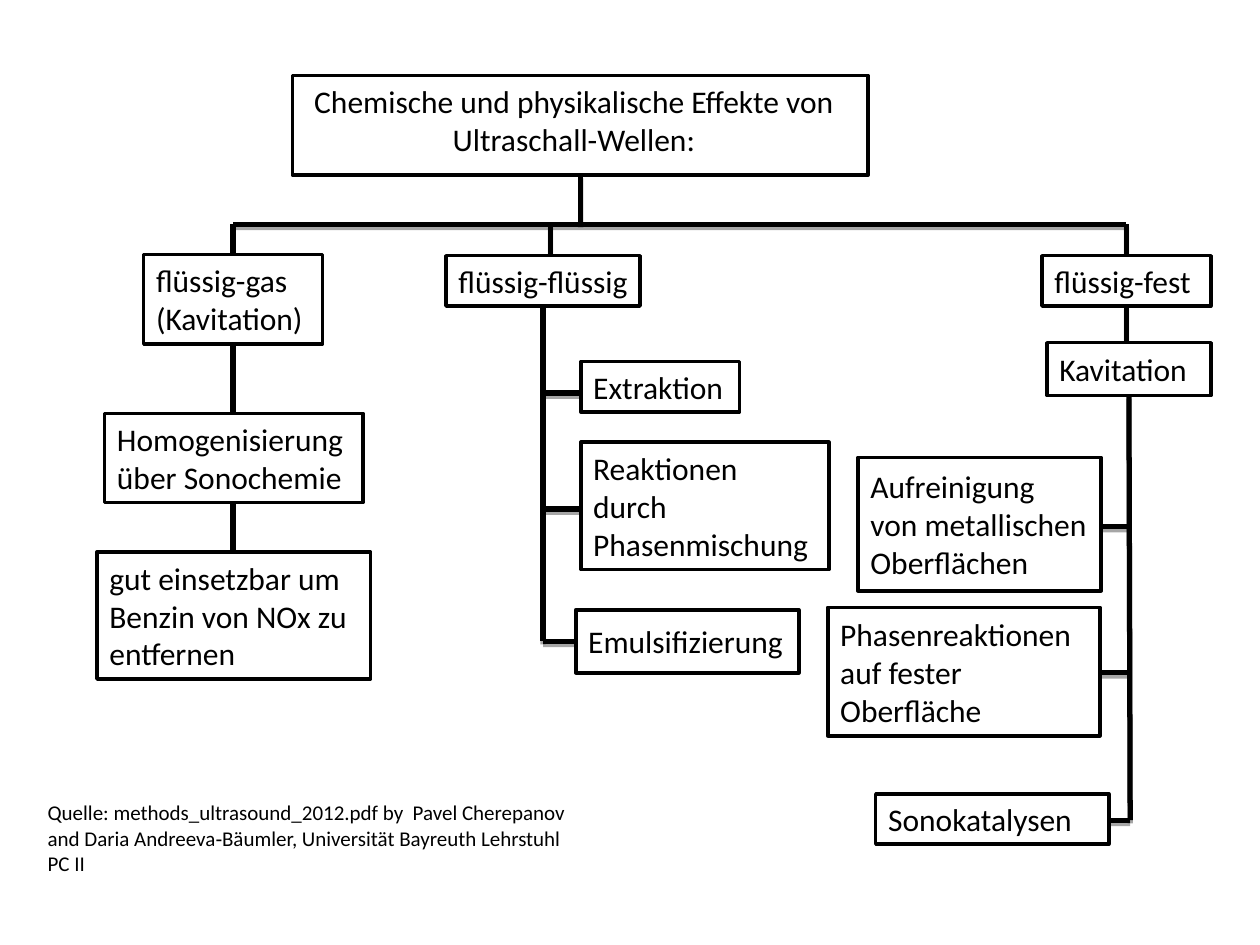
from lxml import etree
from pptx import Presentation
from pptx.dml.color import RGBColor
from pptx.enum.shapes import MSO_CONNECTOR, MSO_SHAPE
from pptx.enum.text import MSO_ANCHOR, MSO_AUTO_SIZE, PP_ALIGN
from pptx.oxml.ns import nsdecls
from pptx.util import Inches, Pt

BLACK = RGBColor(0x00, 0x00, 0x00)
WHITE = RGBColor(0xFF, 0xFF, 0xFF)
STRAIGHT = MSO_CONNECTOR.STRAIGHT
RECTANGLE = MSO_SHAPE.RECTANGLE
TOP, MIDDLE = MSO_ANCHOR.TOP, MSO_ANCHOR.MIDDLE
LEFT, CENTER = PP_ALIGN.LEFT, PP_ALIGN.CENTER
NO_AUTO_SIZE = MSO_AUTO_SIZE.NONE

LINE_SHADOW = (
    f'<a:effectLst {nsdecls("a")}>'
    '<a:outerShdw blurRad="0" dist="23000" dir="5400000" rotWithShape="0">'
    '<a:srgbClr val="000000"><a:alpha val="35000"/></a:srgbClr>'
    '</a:outerShdw></a:effectLst>'
)

HEADING = "Chemische und physikalische Effekte von Ultraschall-Wellen:"
SOURCE = ("Quelle: methods_ultrasound_2012.pdf by  Pavel Cherepanov and Daria "
          "Andreeva‐Bäumler, Universität Bayreuth Lehrstuhl PC II")

# Text, (left, top, width, height)
EFFECTS = [
    ("flüssig-gas\n(Kavitation)", (1.14, 2.02, 1.42, 0.71)),
    ("Homogenisierung über Sonochemie", (0.83, 3.28, 2.05, 0.71)),
    ("gut einsetzbar um Benzin von NOx zu entfernen", (0.77, 4.38, 2.17, 1.01)),
    ("Extraktion", (4.61, 2.87, 1.26, 0.4)),
    ("Reaktionen durch Phasenmischung", (4.61, 3.51, 1.97, 1.01)),
    ("Emulsifizierung", (4.57, 4.84, 1.77, 0.5)),
    ("flüssig-fest", (8.27, 2.03, 1.34, 0.4)),
    ("Kavitation", (8.31, 2.72, 1.3, 0.42)),
    ("Phasenreaktionen auf fester Oberfläche", (6.57, 4.82, 2.16, 1.02)),
    ("Sonokatalysen", (6.95, 6.3, 1.85, 0.4)),
]

HEADING_X, BAR_Y = 4.61, 1.78
GAS_X, LIQUID_X, SOLID_X = 1.85, 4.37, 8.94
LIQUID_TRUNK_X, SOLID_TRUNK_X = 4.31, 8.97
LIQUID_BRANCHES = [(3.12, 4.61), (4.04, 4.61), (5.09, 4.57)]
SOLID_BRANCHES = [(4.18, 8.71), (5.34, 8.74), (6.51, 8.74)]


def write(shape, text, size=18, align=LEFT, anchor=MIDDLE, insets=(0.1, 0.1)):
    """Fill a shape with text; insets are the left and right margins."""
    frame = shape.text_frame
    frame.text = text
    settings = {
        "word_wrap": True,
        "auto_size": NO_AUTO_SIZE,
        "vertical_anchor": anchor,
        "margin_left": Inches(insets[0]),
        "margin_right": Inches(insets[1]),
        "margin_top": Inches(0.05),
        "margin_bottom": Inches(0.05),
    }
    for key, value in settings.items():
        setattr(frame, key, value)
    for paragraph in frame.paragraphs:
        paragraph.alignment = align
        font = paragraph.runs[0].font
        font.name, font.size = "Calibri", Pt(size)
        font.color.rgb = BLACK


def outline(shape):
    shape.fill.solid()
    shape.fill.fore_color.rgb = WHITE
    shape.line.color.rgb = BLACK
    shape.line.width = Pt(2)


def add_heading(slide):
    heading = slide.shapes.title
    place = {"left": 2.32, "top": 0.6, "width": 4.57, "height": 0.79}
    for key, value in place.items():
        setattr(heading, key, Inches(value))
    outline(heading)
    write(heading, HEADING, align=CENTER, anchor=TOP, insets=(0.05, 0.15))


def add_effect(slide, text, place, **text_format):
    box = slide.shapes.add_shape(RECTANGLE, *map(Inches, place))
    box.shadow.inherit = False
    outline(box)
    write(box, text, **text_format)


def add_line(slide, x1, y1, x2, y2):
    line = slide.shapes.add_connector(STRAIGHT, *map(Inches, (x1, y1, x2, y2)))
    line.line.color.rgb = BLACK
    line.line.width = Pt(3)
    line._element.spPr.append(etree.fromstring(LINE_SHADOW))


def add_tree_lines(slide):
    add_line(slide, HEADING_X, 1.39, HEADING_X, BAR_Y)
    add_line(slide, GAS_X, BAR_Y, SOLID_X, BAR_Y)
    for x in (GAS_X, LIQUID_X, SOLID_X):
        add_line(slide, x, BAR_Y, x, 2.03)

    add_line(slide, GAS_X, 2.72, GAS_X, 3.28)
    add_line(slide, GAS_X, 3.98, GAS_X, 4.38)
    add_line(slide, SOLID_X, 2.43, SOLID_X, 2.72)

    add_line(slide, LIQUID_TRUNK_X, 2.43, LIQUID_TRUNK_X, 5.09)
    add_line(slide, 8.96, 3.14, SOLID_TRUNK_X, 6.51)
    for trunk_x, branches in ((LIQUID_TRUNK_X, LIQUID_BRANCHES),
                              (SOLID_TRUNK_X, SOLID_BRANCHES)):
        for y, end_x in branches:
            add_line(slide, trunk_x, y, end_x, y)


def add_source(slide):
    source = slide.shapes.add_textbox(*map(Inches, (0.28, 6.3, 4.33, 0.71)))
    write(source, SOURCE, size=12, anchor=TOP)


def main():
    presentation = Presentation()
    presentation.slide_width = Inches(10)
    presentation.slide_height = Inches(7.5)
    slide = presentation.slides.add_slide(presentation.slide_layouts[5])

    add_heading(slide)
    add_tree_lines(slide)
    for text, place in EFFECTS:
        add_effect(slide, text, place)
    add_effect(slide, "flüssig-flüssig", (3.54, 2.03, 1.54, 0.4),
               insets=(0.1, 0))
    add_effect(slide, "Aufreinigung\nvon metallischen Oberflächen",
               (6.81, 3.63, 1.93, 1.06), insets=(0.1, 0.05))
    add_source(slide)

    presentation.save("out.pptx")


if __name__ == "__main__":
    main()
